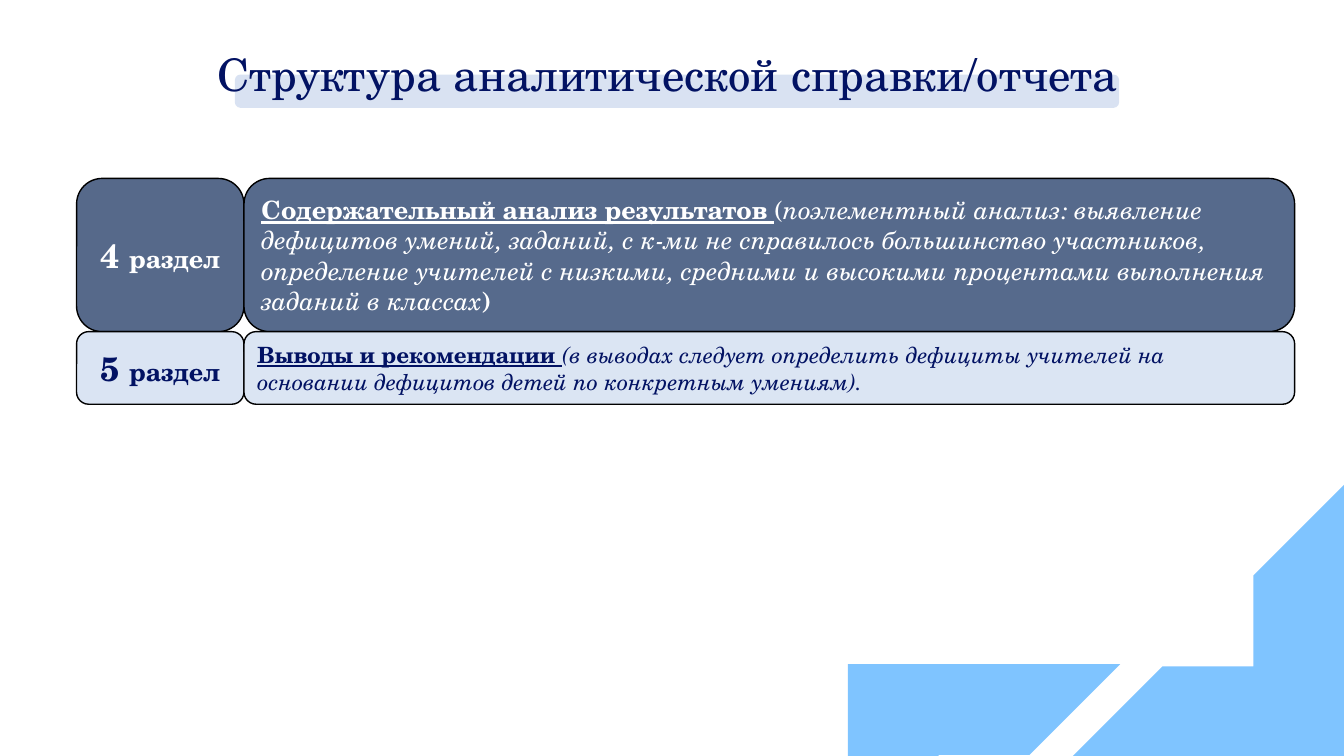
from lxml import etree
from pptx import Presentation
from pptx.dml.color import RGBColor
from pptx.enum.shapes import MSO_SHAPE
from pptx.enum.text import MSO_ANCHOR, PP_ALIGN
from pptx.oxml.ns import qn
from pptx.util import Inches, Pt

ROUNDED = MSO_SHAPE.ROUNDED_RECTANGLE
HALF_FRAME = MSO_SHAPE.HALF_FRAME
MIDDLE = MSO_ANCHOR.MIDDLE
LEFT, CENTER = PP_ALIGN.LEFT, PP_ALIGN.CENTER

FONT = "TeX Gyre Schola"
NAVY = RGBColor(0x02, 0x12, 0x63)
WHITE = RGBColor(0xFF, 0xFF, 0xFF)
BLACK = RGBColor(0x00, 0x00, 0x00)
DEEP_BLUE = RGBColor(0x1E, 0x38, 0x64)
SLATE = RGBColor(0x56, 0x6A, 0x8C)
PALE = RGBColor(0xDA, 0xE4, 0xF3)
PALE_BLUE = RGBColor(0xDB, 0xE5, 0xF3)
TITLE_BAR = RGBColor(0xB4, 0xC7, 0xE7)
SKY = RGBColor(0x00, 0x8A, 0xFF)

prs = Presentation()
prs.slide_width, prs.slide_height = Inches(13.33), Inches(7.5)
slide = prs.slides.add_slide(prs.slide_layouts[6])


def add_block(kind, left, top, width, height, color, opacity=100, outlined=False):
    block = slide.shapes.add_shape(
        kind, Inches(left), Inches(top), Inches(width), Inches(height))
    block.shadow.inherit = False
    block.fill.solid()
    block.fill.fore_color.rgb = color
    if opacity < 100:
        srgb = block.fill._xPr.find(qn("a:solidFill")).find(qn("a:srgbClr"))
        etree.SubElement(srgb, qn("a:alpha")).set("val", str(opacity * 1000))
    if outlined:
        block.line.color.rgb = BLACK
        block.line.width = Pt(1)
    else:
        block.line.fill.background()
    return block


def write(frame, runs, color, size, align):
    frame.word_wrap = True
    frame.vertical_anchor = MIDDLE
    paragraph = frame.paragraphs[0]
    paragraph.alignment = align
    paragraph.font.name = FONT
    paragraph.font.size = Pt(size)
    paragraph.font.color.rgb = color
    for text, style in runs:
        run = paragraph.add_run()
        run.text = text
        for attribute, value in style.items():
            setattr(run.font, attribute, value)
    return paragraph


HEADING = {"bold": True, "underline": True}
ITALIC = {"italic": True}
BOLD = {"bold": True}

sections = [
    ("4", 1.77, 1.52, DEEP_BLUE, 75, SLATE, WHITE, 18, [
        ("Содержательный анализ результатов ", HEADING),
        ("(", {}),
        ("поэлементный анализ: выявление дефицитов умений, заданий, "
         "с к-ми не справилось большинство участников, определение учителей "
         "с низкими, средними и высокими процентами выполнения заданий в классах",
         ITALIC),
        (")", BOLD)]),
    ("5", 3.29, 0.72, PALE, 100, PALE_BLUE, NAVY, 16, [
        ("Выводы и рекомендации ", HEADING),
        ("(в выводах следует определить дефициты учителей на основании "
         "дефицитов детей по конкретным умениям).", ITALIC)]),
]
for number, top, height, label_fill, opacity, body_fill, ink, size, body_runs in sections:
    label = add_block(ROUNDED, 0.76, top, 1.66, height, label_fill, opacity, True)
    label_runs = [(number + " ", {"bold": True, "size": Pt(24)}), ("раздел", BOLD)]
    write(label.text_frame, label_runs, ink, 18, CENTER)
    body = add_block(ROUNDED, 2.42, top, 10.42, height, body_fill, outlined=True)
    write(body.text_frame, body_runs, ink, size, LEFT)

add_block(ROUNDED, 2.33, 0.74, 8.77, 0.33, TITLE_BAR, 50)
title = slide.shapes.add_textbox(Inches(2.06), Inches(0.35), Inches(9.22), Inches(0.82))
title_line = write(title.text_frame, [("Структура аналитической справки/отчета", {})],
                   NAVY, 32, LEFT)
title_line.line_spacing = 0.9

for left, top, turn in [(8.41, 6.59, 0), (10.63, 4.81, 180)]:
    corner = add_block(HALF_FRAME, left, top, 2.7, 2.7, SKY, 50)
    corner.rotation = turn

prs.save("out.pptx")
